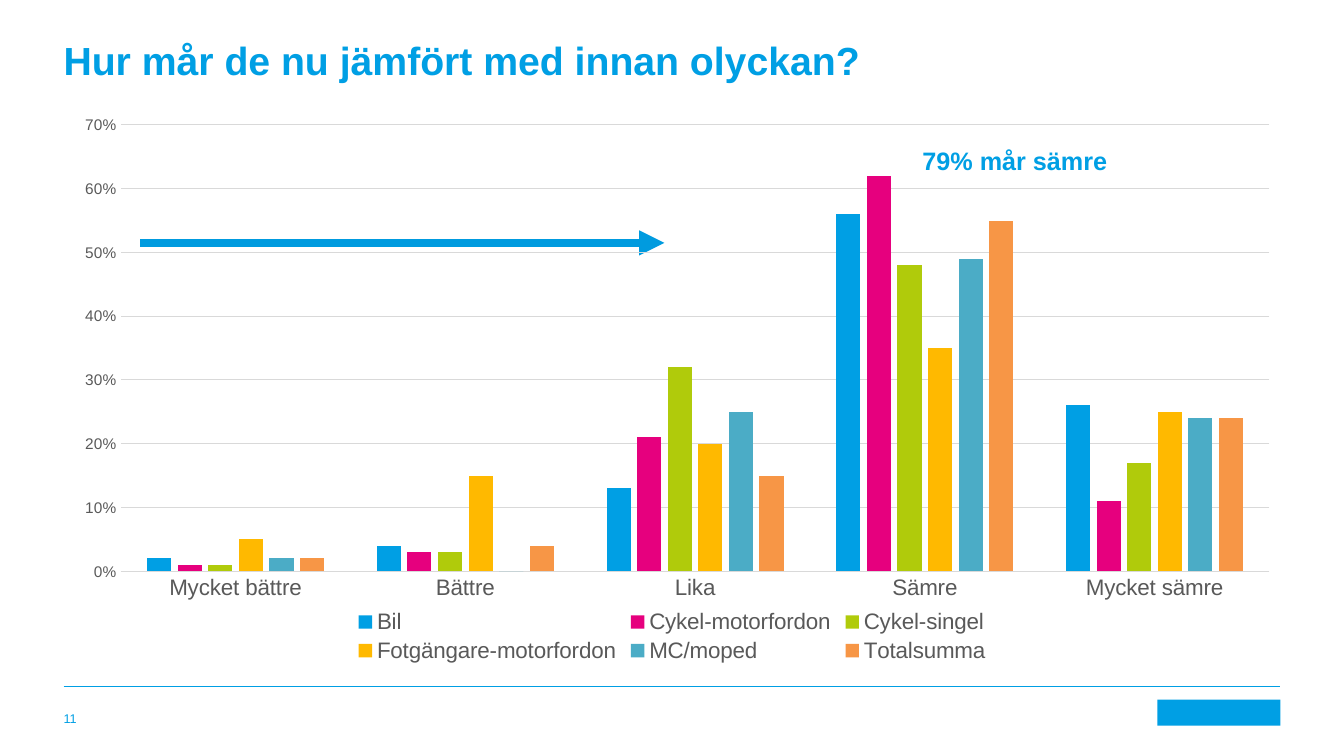
from lxml import etree
from pptx import Presentation
from pptx.chart.data import CategoryChartData
from pptx.dml.color import RGBColor
from pptx.enum.chart import XL_CHART_TYPE, XL_LEGEND_POSITION, XL_TICK_MARK
from pptx.enum.shapes import MSO_CONNECTOR, MSO_SHAPE
from pptx.enum.text import MSO_ANCHOR, MSO_AUTO_SIZE
from pptx.oxml import parse_xml
from pptx.oxml.ns import nsdecls, qn
from pptx.util import Inches, Pt

COLUMNS = XL_CHART_TYPE.COLUMN_CLUSTERED
LEGEND_BOTTOM = XL_LEGEND_POSITION.BOTTOM
NO_TICKS = XL_TICK_MARK.NONE
STRAIGHT = MSO_CONNECTOR.STRAIGHT
RECTANGLE = MSO_SHAPE.RECTANGLE
TOP, BOTTOM = MSO_ANCHOR.TOP, MSO_ANCHOR.BOTTOM
FIXED = MSO_AUTO_SIZE.NONE
TITLE_ONLY = 5

LEFT, WIDTH = 0.63, 12.07
CATEGORIES = ["Mycket bättre", "Bättre", "Lika", "Sämre", "Mycket sämre"]
SERIES = [
    ("Bil", "009FE4", [0.02, 0.04, 0.13, 0.56, 0.26]),
    ("Cykel-motorfordon", "E6007E", [0.01, 0.03, 0.21, 0.62, 0.11]),
    ("Cykel-singel", "B0CB0B", [0.01, 0.03, 0.32, 0.48, 0.17]),
    ("Fotgängare-motorfordon", "FFB900", [0.05, 0.15, 0.2, 0.35, 0.25]),
    ("MC/moped", "4BACC6", [0.02, 0, 0.25, 0.49, 0.24]),
    ("Totalsumma", "F79646", [0.02, 0.04, 0.15, 0.55, 0.24]),
]
PLOT_LAYOUT = {"layoutTarget": "inner", "xMode": "edge", "yMode": "edge",
               "x": 0.047, "y": 0.016, "w": 0.944, "h": 0.81}


def color(value):
    return RGBColor.from_string(value)


def set_font(font, size, value, name="Arial", bold=False):
    font.name = name
    font.size = Pt(size)
    font.bold = bold
    font.color.rgb = color(value)


def set_line(line, value, width):
    line.color.rgb = color(value)
    line.width = Pt(width)


def write(shape, text, size=18, value="009FE4", bold=False, anchor=TOP, inset=None):
    frame = shape.text_frame
    frame.word_wrap = True
    frame.auto_size = FIXED
    frame.vertical_anchor = anchor
    if inset is not None:
        frame.margin_left = frame.margin_right = Inches(inset)
        frame.margin_top = frame.margin_bottom = Inches(inset)
    para = frame.paragraphs[0]
    para.alignment = 1
    span = para.add_run()
    span.text = text
    set_font(span.font, size, value, bold=bold)


class SlideBuilder:
    accent = "009FE4"
    grey = "595959"
    pale = "D9D9D9"

    def __init__(self, deck):
        self.slide = deck.slides.add_slide(deck.slide_layouts[TITLE_ONLY])
        self.shapes = self.slide.shapes

    def title(self, text, left, top, width, height):
        title = self.shapes.title
        title.left, title.top = Inches(left), Inches(top)
        title.width, title.height = Inches(width), Inches(height)
        write(title, text, size=28, bold=True, inset=0)

    def text(self, text, left, top, width, height, **style):
        box = self.shapes.add_textbox(Inches(left), Inches(top), Inches(width), Inches(height))
        write(box, text, **style)

    def block(self, left, top, width, height):
        block = self.shapes.add_shape(RECTANGLE, Inches(left), Inches(top),
                                      Inches(width), Inches(height))
        block.shadow.inherit = False
        block.fill.solid()
        block.fill.fore_color.rgb = color(self.accent)
        block.line.fill.background()

    def line(self, left, right, top, value, width, arrow=False):
        line = self.shapes.add_connector(STRAIGHT, Inches(left), Inches(top),
                                         Inches(right), Inches(top))
        set_line(line.line, value, width)
        properties = line._element.spPr
        if arrow:
            etree.SubElement(properties.find(qn("a:ln")), qn("a:tailEnd"), type="triangle")
        etree.SubElement(properties, qn("a:effectLst"))

    def chart(self, left, top, width, height):
        data = CategoryChartData(number_format="0%")
        data.categories = CATEGORIES
        for name, _, values in SERIES:
            data.add_series(name, values)
        chart = self.shapes.add_chart(COLUMNS, Inches(left), Inches(top),
                                      Inches(width), Inches(height), data).chart
        set_font(chart.font, 10, "000000")
        chart.has_title = False
        chart.has_legend = True
        chart.legend.position = LEGEND_BOTTOM
        chart.legend.include_in_layout = False
        set_font(chart.legend.font, 16, self.grey)
        plot = chart.plots[0]
        plot.gap_width, plot.overlap = 219, -27
        plot.vary_by_categories = False
        for series, (_, value, _) in zip(plot.series, SERIES):
            series.format.fill.solid()
            series.format.fill.fore_color.rgb = color(value)
        self.axes(chart)
        self.layout(chart)

    def axes(self, chart):
        for axis, size in ((chart.category_axis, 16), (chart.value_axis, 11)):
            axis.major_tick_mark = axis.minor_tick_mark = NO_TICKS
            set_font(axis.tick_labels.font, size, self.grey)
        set_line(chart.category_axis.format.line, self.pale, 0.75)
        values = chart.value_axis
        values.minimum_scale, values.maximum_scale, values.major_unit = 0, 0.7, 0.1
        values.tick_labels.number_format = "0%"
        values.tick_labels.number_format_is_linked = False
        values.format.line.fill.background()
        values.has_major_gridlines = True
        set_line(values.major_gridlines.format.line, self.pale, 0.75)

    def layout(self, chart):
        body = chart._chartSpace.find(qn("c:chart"))
        body.addnext(parse_xml(f"<c:spPr {nsdecls('c', 'a')}><a:noFill/>"
                               "<a:ln><a:noFill/></a:ln></c:spPr>"))
        area = body.find(qn("c:plotArea"))
        for layout in area.findall(qn("c:layout")):
            area.remove(layout)
        layout = etree.Element(qn("c:layout"))
        manual = etree.SubElement(layout, qn("c:manualLayout"))
        for name, value in PLOT_LAYOUT.items():
            etree.SubElement(manual, qn(f"c:{name}"), val=str(value))
        area.insert(0, layout)


def main():
    deck = Presentation()
    deck.slide_width, deck.slide_height = Inches(13.33), Inches(7.5)
    page = SlideBuilder(deck)
    page.line(LEFT, LEFT + WIDTH, 6.81, page.accent, 0.5)
    page.block(11.48, 6.94, 1.22, 0.26)
    page.title("Hur mår de nu jämfört med innan olyckan?", LEFT, 0.36, WIDTH, 1.65)
    page.text("11", LEFT, 6.94, 0.58, 0.26, size=9, anchor=BOTTOM, inset=0)
    page.line(1.39, 6.59, 2.41, "009BDF", 6, arrow=True)
    page.chart(LEFT, 1.15, WIDTH, 5.47)
    page.text("79% mår sämre", 9.05, 1.39, 2.44, 0.4, bold=True)
    deck.save("out.pptx")


if __name__ == "__main__":
    main()
